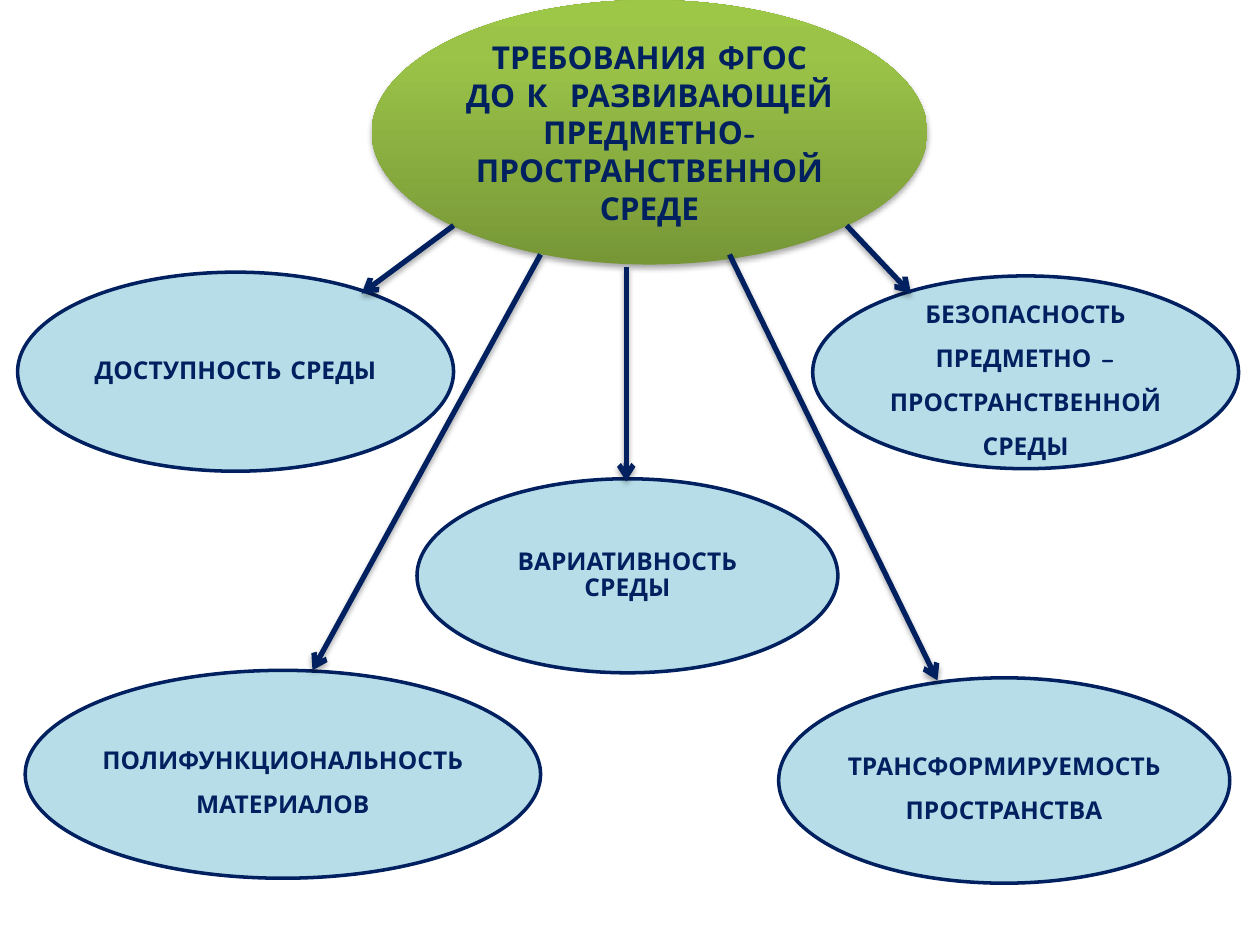
import copy
from dataclasses import dataclass

import lxml.etree
import pptx
import pptx.dml.color
import pptx.enum.shapes
import pptx.enum.text
import pptx.oxml
import pptx.oxml.ns
import pptx.util

Inches = pptx.util.Inches
Pt = pptx.util.Pt

COLORS = {
    "navy": "002060",
    "pale_blue": "B7DEE8",
    "green_dark": "779737",
    "green_middle": "9BC348",
    "green_light": "9DC746",
    "shadow": "000000",
}
FONT = "Comic Neue"
GRADIENT = ((0, "green_dark"), (0.8, "green_middle"), (1, "green_light"))


@dataclass
class Oval:
    text: str
    left: float
    top: float
    width: float
    height: float
    line_spacing: float


@dataclass
class Arrow:
    begin: tuple[float, float]
    end: tuple[float, float]


CENTER = Oval(
    "ТРЕБОВАНИЯ ФГОС ДО К  РАЗВИВАЮЩЕЙ ПРЕДМЕТНО-ПРОСТРАНСТВЕННОЙ СРЕДЕ",
    2.95, 0, 4.41, 2.1, 1,
)
REQUIREMENTS = [
    Oval("ТРАНСФОРМИРУЕМОСТЬ ПРОСТРАНСТВА", 6.18, 5.38, 3.58, 1.63, 1.5),
    Oval("ПОЛИФУНКЦИОНАЛЬНОСТЬ МАТЕРИАЛОВ", 0.2, 5.32, 4.09, 1.65, 1.5),
    Oval("БЕЗОПАСНОСТЬ ПРЕДМЕТНО – ПРОСТРАНСТВЕННОЙ СРЕДЫ", 6.45, 2.19, 3.38, 1.53, 1.5),
    Oval("ВАРИАТИВНОСТЬ СРЕДЫ", 3.31, 3.8, 3.34, 1.54, 0.9),
    Oval("ДОСТУПНОСТЬ СРЕДЫ", 0.14, 2.16, 3.46, 1.58, 0.9),
]
ARROWS = [
    Arrow((4.97, 2.12), (4.97, 3.82)),
    Arrow((4.29, 2.02), (2.48, 5.32)),
    Arrow((3.6, 1.79), (2.87, 2.33)),
    Arrow((6.72, 1.79), (7.23, 2.33)),
    Arrow((5.79, 2.02), (7.44, 5.4)),
]


def color(name: str) -> pptx.dml.color.RGBColor:
    return pptx.dml.color.RGBColor.from_string(COLORS[name])


def apply_format(target, values: dict) -> None:
    for name, value in values.items():
        setattr(target, name, value)


def add_shadow(properties) -> None:
    for effects in properties.findall(pptx.oxml.ns.qn("a:effectLst")):
        properties.remove(effects)
    properties.append(pptx.oxml.parse_xml(
        f'<a:effectLst {pptx.oxml.ns.nsdecls("a")}>'
        '<a:outerShdw blurRad="40000" dist="23000" dir="5400000" rotWithShape="0">'
        f'<a:srgbClr val="{COLORS["shadow"]}"><a:alpha val="35000"/></a:srgbClr>'
        '</a:outerShdw></a:effectLst>'
    ))


def add_oval(slide, oval: Oval, size: int, inset: tuple[float, float], space_after: float):
    shape = slide.shapes.add_shape(
        pptx.enum.shapes.MSO_SHAPE.OVAL,
        Inches(oval.left), Inches(oval.top), Inches(oval.width), Inches(oval.height),
    )
    shape.shadow.inherit = False
    horizontal, vertical = (Inches(length) for length in inset)
    apply_format(shape.text_frame, {
        "word_wrap": True,
        "vertical_anchor": pptx.enum.text.MSO_ANCHOR.MIDDLE,
        "margin_left": horizontal,
        "margin_right": horizontal,
        "margin_top": vertical,
        "margin_bottom": vertical,
    })
    paragraph = shape.text_frame.paragraphs[0]
    apply_format(paragraph, {
        "text": oval.text,
        "alignment": pptx.enum.text.PP_ALIGN.CENTER,
        "line_spacing": oval.line_spacing,
        "space_after": Pt(space_after),
    })
    font = paragraph.runs[0].font
    apply_format(font, {"name": FONT, "size": Pt(size), "bold": True})
    font.color.rgb = color("navy")
    return shape


def add_center(slide, oval: Oval) -> None:
    shape = add_oval(slide, oval, 18, (0.1, 0.05), 0)
    shape.line.fill.background()
    shape.fill.gradient()
    shape.fill.gradient_angle = 90
    stop_list = shape.element.spPr.find(".//" + pptx.oxml.ns.qn("a:gsLst"))
    stop_list.insert(1, copy.deepcopy(stop_list[0]))
    for stop, (position, name) in zip(shape.fill.gradient_stops, GRADIENT):
        stop.position = position
        stop.color.rgb = color(name)
    add_shadow(shape.element.spPr)


def add_requirement(slide, oval: Oval) -> None:
    shape = add_oval(slide, oval, 14, (0, 0), 5)
    shape.fill.solid()
    shape.fill.fore_color.rgb = color("pale_blue")
    shape.line.color.rgb = color("navy")
    shape.line.width = Pt(2)


def add_arrow(slide, arrow: Arrow) -> None:
    points = [Inches(length) for length in arrow.begin + arrow.end]
    connector = slide.shapes.add_connector(pptx.enum.shapes.MSO_CONNECTOR.STRAIGHT, *points)
    connector.line.color.rgb = color("navy")
    connector.line.width = Pt(3)
    properties = connector.element.spPr
    outline = properties.find(pptx.oxml.ns.qn("a:ln"))
    lxml.etree.SubElement(outline, pptx.oxml.ns.qn("a:tailEnd"), type="arrow")
    add_shadow(properties)


def main() -> None:
    presentation = pptx.Presentation()
    presentation.slide_width = Inches(10)
    presentation.slide_height = Inches(7.5)
    slide = presentation.slides.add_slide(presentation.slide_layouts[6])
    add_center(slide, CENTER)
    for requirement in REQUIREMENTS:
        add_requirement(slide, requirement)
    for arrow in ARROWS:
        add_arrow(slide, arrow)
    presentation.save("out.pptx")


if __name__ == "__main__":
    main()
